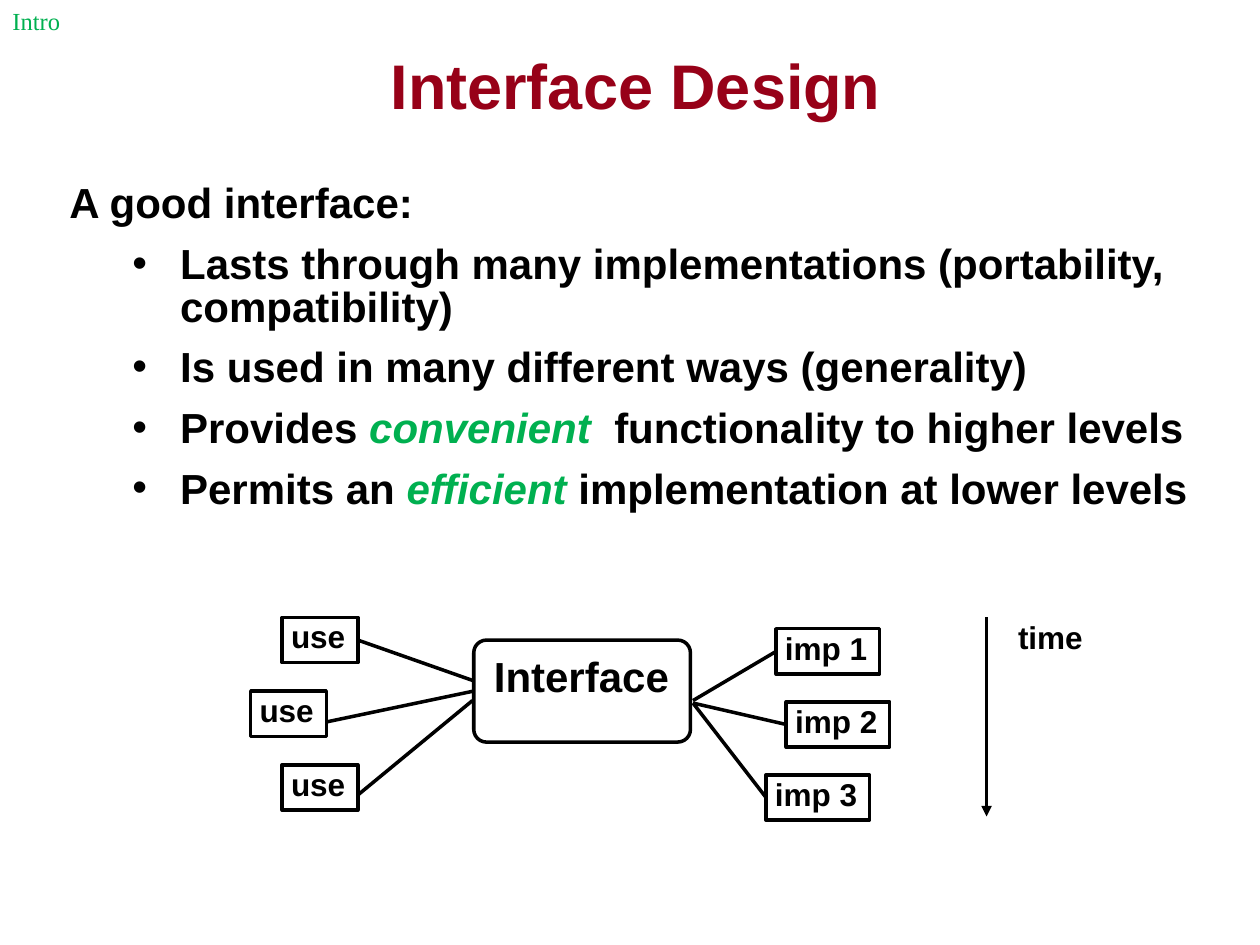
from dataclasses import dataclass

from lxml.etree import SubElement
from pptx import Presentation
from pptx.dml.color import RGBColor
from pptx.enum.shapes import MSO_CONNECTOR, MSO_SHAPE
from pptx.enum.text import MSO_ANCHOR, MSO_AUTO_SIZE, PP_ALIGN
from pptx.oxml.ns import qn
from pptx.util import Inches, Pt

# Grid of 100 columns by 75 rows on a 10 x 7.5 inch slide
COLUMNS, ROWS = 100, 75
CELL = Inches(0.1)
LEFT_SIDE, RIGHT_SIDE = 1, 3


@dataclass(frozen=True)
class Theme:
    ink: RGBColor = RGBColor(0, 0, 0)
    title: RGBColor = RGBColor(0x97, 0x01, 0x18)
    accent: RGBColor = RGBColor(0x00, 0xB0, 0x50)
    sans: str = "Arial"
    serif: str = "Times New Roman"
    title_size: int = 36
    body_size: int = 24
    label_size: int = 18
    tag_size: int = 14
    stroke: int = 2


THEME = Theme()
BODY = {"name": THEME.sans, "size": Pt(THEME.body_size), "bold": True, "color": THEME.ink}
LABEL = BODY | {"size": Pt(THEME.label_size)}
TITLE = BODY | {"size": Pt(THEME.title_size), "color": THEME.title}
TAG = {"name": THEME.serif, "size": Pt(THEME.tag_size), "color": THEME.accent}
EMPHASIS = BODY | {"italic": True, "color": THEME.accent}

TIGHT = {"margin_left": Inches(0.07), "margin_right": Inches(0.07),
         "margin_top": Inches(0.03), "margin_bottom": Inches(0.03),
         "vertical_anchor": MSO_ANCHOR.TOP, "word_wrap": False,
         "auto_size": MSO_AUTO_SIZE.SHAPE_TO_FIT_TEXT}

HEADING = "A good interface:"
QUALITIES = [
    [("Lasts through many implementations (portability, compatibility)", BODY)],
    [("Is used in many different ways (generality)", BODY)],
    [("Provides ", BODY), ("convenient ", EMPHASIS),
     (" functionality to higher levels", BODY)],
    [("Permits an ", BODY), ("efficient", EMPHASIS),
     (" implementation at lower levels", BODY)],
]


def cells(*lengths):
    return [round(length * CELL) for length in lengths]


def apply(target, formats):
    for name, value in formats.items():
        if name == "color":
            target.color.rgb = value
        else:
            setattr(target, name, value)


def write(paragraph, runs, **formats):
    apply(paragraph, formats)
    for words, font in runs:
        run = paragraph.add_run()
        run.text = words
        apply(run.font, font)


def add_text(slide, place, words, font, frame_format, **formats):
    frame = slide.shapes.add_textbox(*cells(*place)).text_frame
    apply(frame, frame_format)
    write(frame.paragraphs[0], [(words, font)], **formats)
    return frame


def add_outline(slide, preset, place):
    outline = slide.shapes.add_shape(preset, *cells(*place))
    outline.shadow.inherit = False
    outline.fill.background()
    apply(outline.line, {"color": THEME.ink, "width": Pt(THEME.stroke)})
    return outline


def add_label_box(slide, place, words):
    box = add_outline(slide, MSO_SHAPE.RECTANGLE, place)
    apply(box.text_frame, TIGHT)
    write(box.text_frame.paragraphs[0], [(words, LABEL)],
          alignment=PP_ALIGN.LEFT, line_spacing=0.92)
    return box


def add_line(slide, start, end, arrow=False):
    line = slide.shapes.add_connector(MSO_CONNECTOR.STRAIGHT, *cells(*start, *end))
    apply(line.line, {"color": THEME.ink, "width": Pt(THEME.stroke)})
    if arrow:
        SubElement(line.line._get_or_add_ln(), qn("a:tailEnd"), type="triangle")
    SubElement(line._element.spPr, qn("a:effectLst"))
    return line


def indent(paragraph, margin, bullet=None):
    properties = paragraph._p.get_or_add_pPr()
    properties.set("marL", str(Inches(margin)))
    properties.set("indent", str(Inches(-0.38)))
    if bullet:
        SubElement(properties, qn("a:buFont"), typeface=THEME.sans)
        SubElement(properties, qn("a:buChar"), char=bullet)


def add_qualities(slide):
    spacing = {"line_spacing": 0.86, "space_before": Pt(9.8)}
    frame = add_text(slide, (4.8, 14.3, 94, 28), HEADING, BODY,
                     TIGHT | {"word_wrap": True}, **spacing)
    indent(frame.paragraphs[0], 0.38)
    for runs in QUALITIES:
        quality = frame.add_paragraph()
        write(quality, runs, level=1, **spacing)
        indent(quality, 0.88, "•")


def add_diagram(slide):
    # Interface in the middle
    add_text(slide, (38.5, 51.9, 15.3, 4), "Interface", BODY, TIGHT, line_spacing=0.87)
    interface = add_outline(slide, MSO_SHAPE.ROUNDED_RECTANGLE, (37.6, 50.8, 17.2, 8.1))
    interface.adjustments[0] = 0.125

    # Implementations, fanning out to the right
    for row, (left, fan) in enumerate([(61.6, 55.6), (62.4, 55.8), (60.8, 55.8)]):
        top = 49.9 + 5.8 * row
        box = add_label_box(slide, (left, top, 8.2, 3.6), f"imp {row + 1}")
        branch = add_line(slide, (55, fan), (left, top + 1.8))
        branch.end_connect(box, LEFT_SIDE)

    # Uses, coming in from the left
    for row, (left, exit_row) in enumerate([(22.4, 50.6), (19.9, 57.3), (22.4, 63.1)]):
        box = add_label_box(slide, (left, 49 + 5.85 * row, 6, 3.6), "use")
        branch = add_line(slide, (left + 6, exit_row), (37.5, 54 + 0.8 * row))
        if row == 0:
            branch.begin_connect(box, RIGHT_SIDE)
        elif row == 1:
            branch.end_connect(interface, LEFT_SIDE)

    # Time axis, its label wide enough for one line
    add_line(slide, (78.3, 49), (78.3, 64.8), arrow=True)
    add_text(slide, (80.1, 49.2, 8, 3.1), "time", LABEL,
             TIGHT | {"word_wrap": True}, line_spacing=0.85)


def main():
    deck = Presentation()
    deck.slide_width, deck.slide_height = cells(COLUMNS, ROWS)
    slide = deck.slides.add_slide(deck.slide_layouts[6])

    # Title and section tag
    add_text(slide, (9.2, 5, 82.5, 4.2), "Interface Design", TITLE,
             {"word_wrap": True, "vertical_anchor": MSO_ANCHOR.MIDDLE},
             alignment=PP_ALIGN.CENTER, line_spacing=0.9)
    add_text(slide, (0, 0, 5.8, 3.4), "Intro", TAG,
             {"word_wrap": False, "auto_size": MSO_AUTO_SIZE.SHAPE_TO_FIT_TEXT})

    # Content
    add_qualities(slide)
    add_diagram(slide)
    deck.save("out.pptx")


if __name__ == "__main__":
    main()
